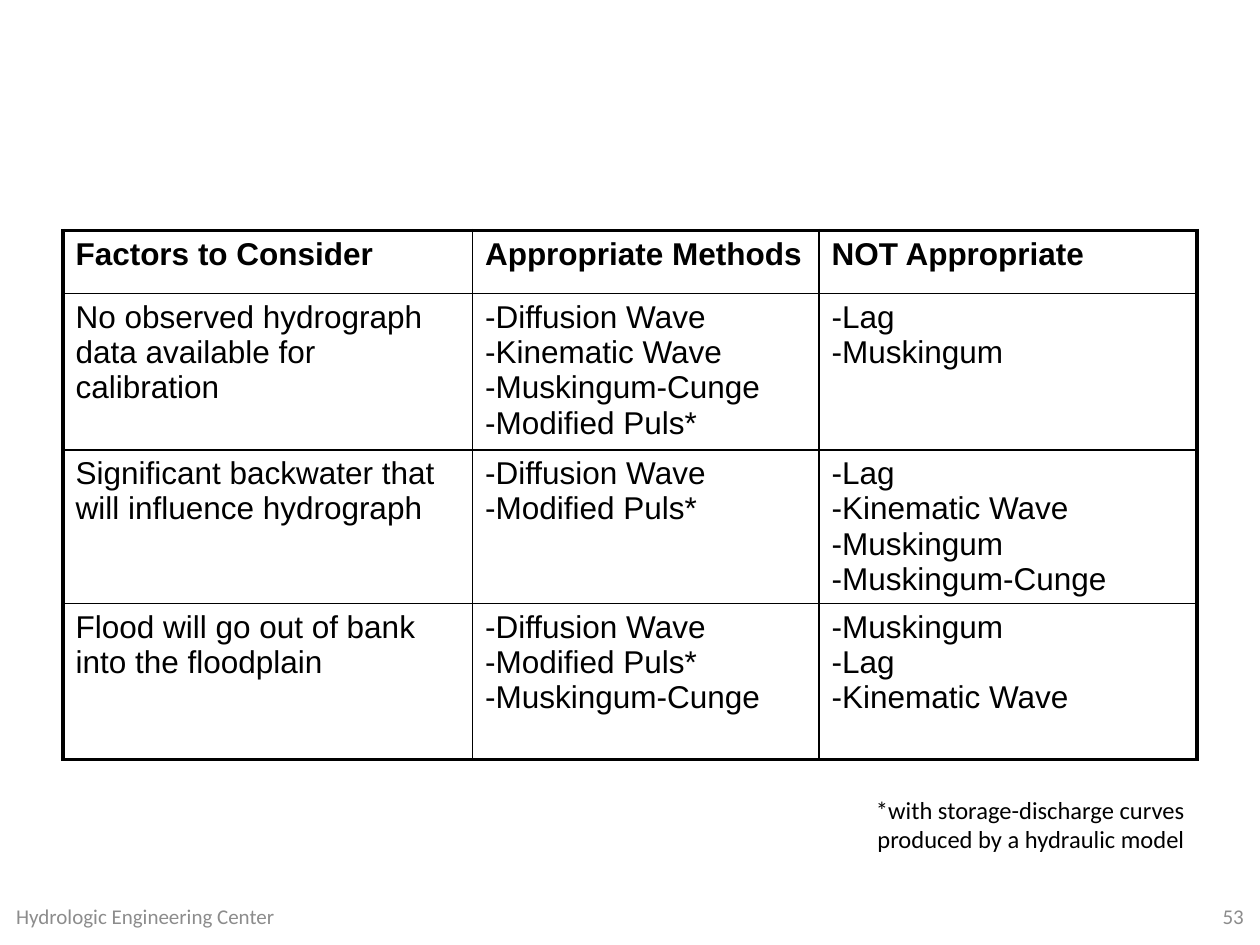
from dataclasses import dataclass

from lxml import etree
from pptx import Presentation
from pptx.dml.color import RGBColor
from pptx.enum import text
from pptx.oxml.ns import qn
from pptx.util import Inches, Pt


@dataclass(frozen=True)
class Theme:
    ink: str = "000000"
    muted: str = "8C8C8C"
    table_font: str = "Arial"
    note_font: str = "Calibri"
    table_size: int = 18
    note_size: int = 14
    footer_size: int = 12
    outer_line: float = 2.25
    inner_line: float = 1


theme = Theme()


def style_font(paragraph, name, size, color, bold=False):
    paragraph.font.name = name
    paragraph.font.size = Pt(size)
    paragraph.font.bold = bold
    paragraph.font.color.rgb = RGBColor.from_string(color)


def add_border(cell, side, width):
    properties = cell._tc.get_or_add_tcPr()
    line = etree.SubElement(properties, qn(f"a:ln{side}"), w=str(Pt(width)))
    fill = etree.SubElement(line, qn("a:solidFill"))
    etree.SubElement(fill, qn("a:srgbClr"), val=theme.ink)


presentation = Presentation()
presentation.slide_width = Inches(10)
presentation.slide_height = Inches(7.5)
slide = presentation.slides.add_slide(presentation.slide_layouts[6])

rows = [
    ["Factors to Consider", "Appropriate Methods", "NOT Appropriate"],
    [
        "No observed hydrograph data available for calibration",
        "-Diffusion Wave\n-Kinematic Wave\n-Muskingum-Cunge\n-Modified Puls*",
        "-Lag\n-Muskingum",
    ],
    [
        "Significant backwater that will influence hydrograph",
        "-Diffusion Wave\n-Modified Puls*",
        "-Lag\n-Kinematic Wave\n-Muskingum\n-Muskingum-Cunge",
    ],
    [
        "Flood will go out of bank into the floodplain",
        "-Diffusion Wave\n-Modified Puls*\n-Muskingum-Cunge",
        "-Muskingum\n-Lag\n-Kinematic Wave",
    ],
]
column_widths = [3.25, 2.75, 3]
row_heights = [0.5, 1.24, 1.22, 1.24]
last_row, last_column = len(rows) - 1, len(column_widths) - 1

table = slide.shapes.add_table(
    len(rows), len(column_widths), Inches(0.5), Inches(1.83),
    Inches(sum(column_widths)), Inches(sum(row_heights)),
).table
table.first_row = False
table.horz_banding = False
for column, width in zip(table.columns, column_widths):
    column.width = Inches(width)
for row, height in zip(table.rows, row_heights):
    row.height = Inches(height)

for row_index, row in enumerate(rows):
    for column_index, content in enumerate(row):
        cell = table.cell(row_index, column_index)
        cell.text = content
        for paragraph in cell.text_frame.paragraphs:
            style_font(paragraph, theme.table_font, theme.table_size,
                       theme.ink, bold=row_index == 0)
        outer_sides = {
            "L": column_index == 0,
            "R": column_index == last_column,
            "T": row_index == 0,
            "B": row_index == last_row,
        }
        for side, is_outer in outer_sides.items():
            add_border(cell, side, theme.outer_line if is_outer else theme.inner_line)
        cell.fill.background()

left, right = text.PP_ALIGN.LEFT, text.PP_ALIGN.RIGHT
top, middle = text.MSO_ANCHOR.TOP, text.MSO_ANCHOR.MIDDLE
labels = [
    ("53", (7.64, 7.07, 2.33, 0.4), right, middle, theme.footer_size, theme.muted),
    ("Hydrologic Engineering Center", (0.03, 7.07, 3.17, 0.4), left, middle,
     theme.footer_size, theme.muted),
    ("*with storage-discharge curves produced by a hydraulic model",
     (6.42, 6.26, 3.08, 0.57), right, top, theme.note_size, theme.ink),
]
for content, box, alignment, anchor, size, color in labels:
    frame = slide.shapes.add_textbox(*map(Inches, box)).text_frame
    frame.word_wrap = True
    frame.vertical_anchor = anchor
    paragraph = frame.paragraphs[0]
    paragraph.text = content
    paragraph.alignment = alignment
    style_font(paragraph, theme.note_font, size, color)

presentation.save("out.pptx")
